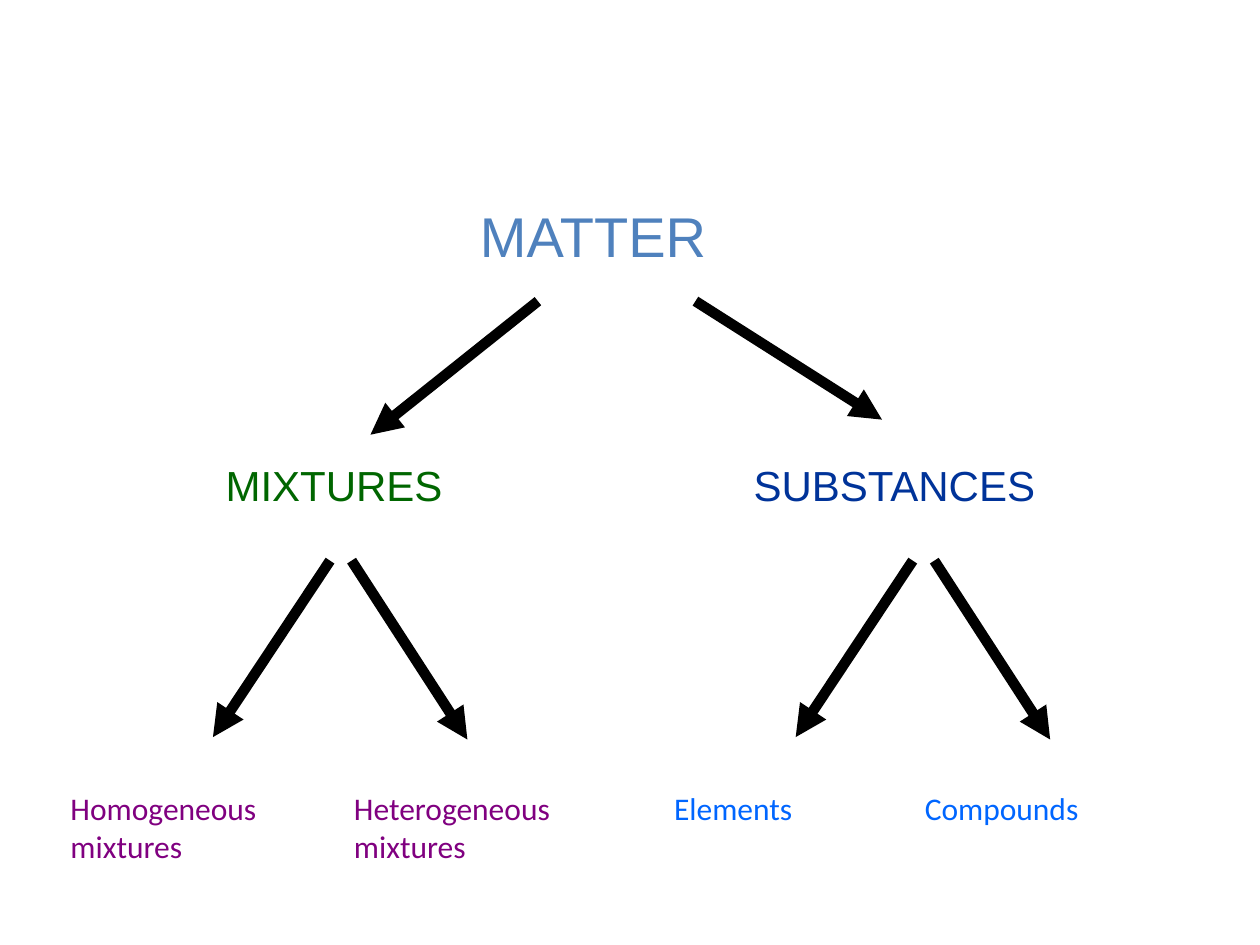
import pptx
import pptx.util
import pptx.dml.color
import pptx.enum.shapes
import pptx.oxml
import pptx.oxml.ns

Pt = pptx.util.Pt
HUES = {"root": "4F81BD", "mix": "006600", "sub": "003399",
        "mixed": "800080", "pure": "0066FF", "line": "000000"}

HEADS = [
    ("MATTER", 274.3, 115.2, 144, 32, "root"),
    ("MIXTURES", 128.9, 262.8, 144, 24, "mix"),
    ("SUBSTANCES", 430.6, 262.8, 192, 24, "sub"),
]
LEAVES = [
    (["Homogeneous", "mixtures"], 40.3, "mixed"),
    (["Heterogeneous", "mixtures"], 202.3, "mixed"),
    (["Elements"], 385.2, "pure"),
    (["Compounds"], 528.5, "pure"),
]
LEAF_TOP, LEAF_WIDE, LEAF_LINE = 450.7, 148.3, 24

TRUNK = [(307.4, 172.1, 211.7, 248.4), (397.4, 172.1, 504, 239.8)]
FORK = [(188.6, 320.4, 121.7, 421.2), (200.9, 320.4, 267.1, 422.6)]
FORK_STEP = 333


def hue(name):
    return pptx.dml.color.RGBColor.from_string(HUES[name])


def add_text(slide, lines, box, size, face, color, gap=0):
    frame = slide.shapes.add_textbox(*map(Pt, box)).text_frame
    frame.word_wrap = True
    frame.margin_left = frame.margin_right = 0
    frame.margin_top = frame.margin_bottom = 0
    frame.text = "\n".join(lines)
    for par in frame.paragraphs:
        par.font.size = Pt(size)
        par.font.name = face
        par.font.color.rgb = hue(color)
        par.space_before = Pt(gap)


def add_arrow(slide, ends):
    kind = pptx.enum.shapes.MSO_CONNECTOR.STRAIGHT
    arrow = slide.shapes.add_connector(kind, *map(Pt, ends))
    arrow.line.width = Pt(6)
    arrow.line.color.rgb = hue("line")
    space = pptx.oxml.ns.nsdecls("a")
    tip = pptx.oxml.parse_xml(f'<a:tailEnd {space} type="triangle"/>')
    arrow.line._get_or_add_ln().append(tip)
    props = arrow._element.spPr
    props.append(pptx.oxml.parse_xml(f"<a:effectLst {space}/>"))


def main():
    deck = pptx.Presentation()
    deck.slide_width, deck.slide_height = Pt(720), Pt(540)
    slide = deck.slides.add_slide(deck.slide_layouts[6])
    for text, left, top, wide, size, color in HEADS:
        add_text(slide, [text], (left, top, wide, 42.5), size, "Arial", color, size / 8)
    for lines, left, color in LEAVES:
        box = (left, LEAF_TOP, LEAF_WIDE, LEAF_LINE * len(lines))
        add_text(slide, lines, box, 18, "Calibri", color)
    forks = [(x1 + shift, y1, x2 + shift, y2)
             for shift in (0, FORK_STEP) for x1, y1, x2, y2 in FORK]
    for ends in TRUNK + forks:
        add_arrow(slide, ends)
    deck.save("out.pptx")


if __name__ == "__main__":
    main()
